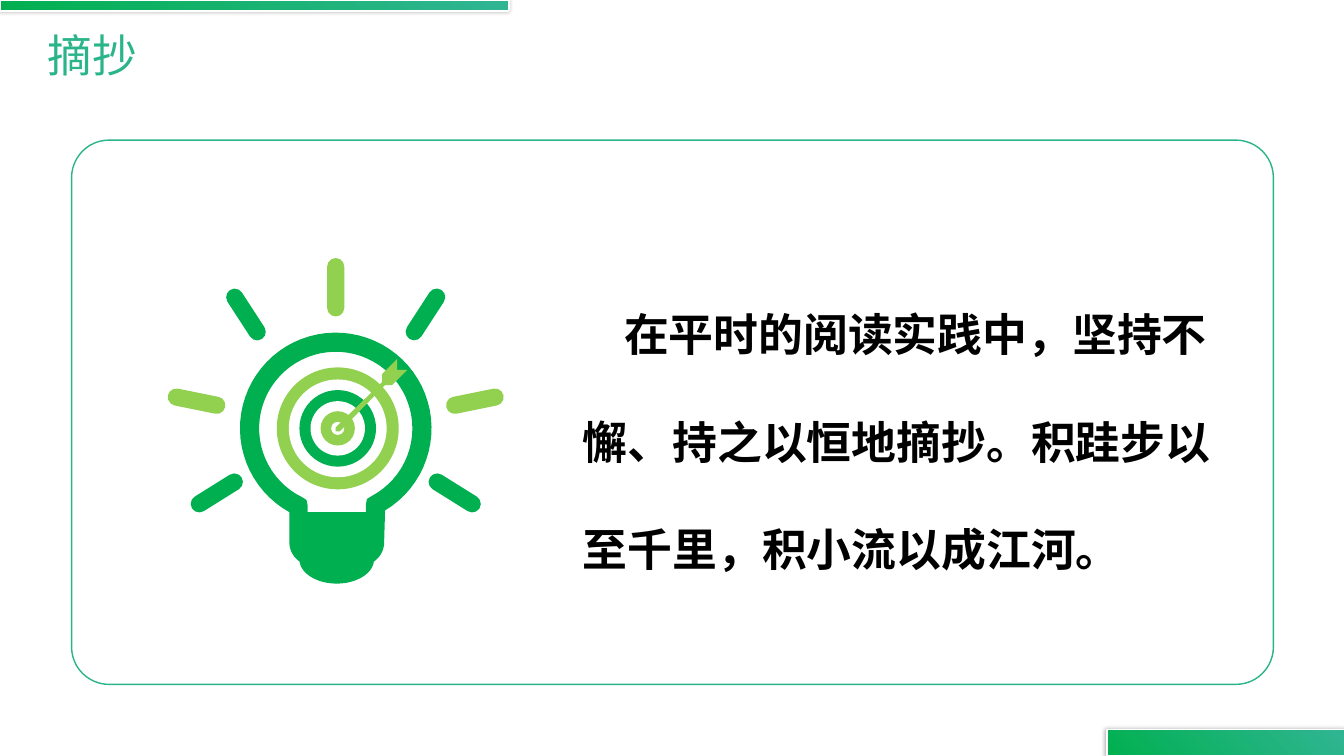
import math
import pptx
import pptx.util
import pptx.dml.color
import pptx.enum.shapes
import pptx.enum.text
import pptx.oxml
import pptx.oxml.ns

Inches = pptx.util.Inches
Pt = pptx.util.Pt
KIND = pptx.enum.shapes.MSO_SHAPE
TEXT = pptx.enum.text
HUES = {"green": "00B050", "lime": "92D050", "teal": "2AB48A",
        "mint": "30B593", "white": "FFFFFF", "black": "000000"}
SHADOW = ('<a:effectLst %s><a:outerShdw blurRad="38100" dist="12700" dir="10800000">'
          '<a:srgbClr val="%s"><a:alpha val="30000"/></a:srgbClr>'
          '</a:outerShdw></a:effectLst>')


def hue(name):
    return pptx.dml.color.RGBColor.from_string(HUES[name])


def apply(item, form):
    for key, value in form.items():
        setattr(item, key, value)


def paint(shape, fill=None, line=None):
    shape.shadow.inherit = False
    if fill:
        shape.fill.solid()
        shape.fill.fore_color.rgb = hue(fill)
    else:
        shape.fill.background()
    if line:
        shape.line.color.rgb = hue(line)
        shape.line.width = Pt(1)
    else:
        shape.line.fill.background()
    return shape


def add(slide, kind, box, fill=None, line=None):
    shape = slide.shapes.add_shape(kind, *map(Inches, box))
    return paint(shape, fill, line)


def disc(slide, x, y, size, fill):
    add(slide, KIND.OVAL, (x - size / 2, y - size / 2, size, size), fill)


def arc(x, y, wide, high, start, end):
    turns = [math.radians(start + (end - start) * i / 60) for i in range(61)]
    return [(x + wide * math.cos(t), y + high * math.sin(t)) for t in turns]


def trace(slide, fill, *loops):
    loops = [[(Inches(x), Inches(y)) for x, y in loop] for loop in loops]
    pen = slide.shapes.build_freeform(*loops[0][0])
    for i, loop in enumerate(loops):
        if i:
            pen.move_to(*loop[0])
        pen.add_line_segments(loop[1:], close=True)
    paint(pen.convert_to_shape(), fill)


def bar(slide, box):
    shape = add(slide, KIND.RECTANGLE, box, "green", "white")
    shape.fill.gradient()
    shape.fill.gradient_angle = 45
    for stop, name in zip(shape.fill.gradient_stops, ("green", "mint")):
        stop.color.rgb = hue(name)
    props = shape.element.spPr
    props.remove(props.find(pptx.oxml.ns.qn("a:effectLst")))
    props.append(pptx.oxml.parse_xml(
        SHADOW % (pptx.oxml.ns.nsdecls("a"), HUES["black"])))


def frame(slide, box):
    shape = add(slide, KIND.ROUNDED_RECTANGLE, box, line="teal")
    shape.adjustments[0] = 0.069


def write(shape, words, box, color, bold, format, para):
    spots = zip(("left", "top", "width", "height"), map(Inches, box))
    apply(shape, dict(spots))
    apply(shape.text_frame, format)
    line = shape.text_frame.paragraphs[0]
    apply(line, para)
    run = line.add_run()
    run.text = words
    apply(run.font, {"size": Pt(32), "name": "Arial", "bold": bold})
    run.font.color.rgb = hue(color)
    return line


def head(slide, box):
    write(slide.shapes.title, "摘抄", box, "teal", False,
          {"word_wrap": True, "auto_size": TEXT.MSO_AUTO_SIZE.NONE,
           "vertical_anchor": TEXT.MSO_ANCHOR.MIDDLE},
          {"alignment": TEXT.PP_ALIGN.LEFT, "line_spacing": 0.9})


def quote(slide, box):
    shape = slide.shapes.add_textbox(*map(Inches, box))
    edges = ("margin_left", "margin_top", "margin_right", "margin_bottom")
    format = {"word_wrap": True, "auto_size": TEXT.MSO_AUTO_SIZE.SHAPE_TO_FIT_TEXT}
    line = write(
        shape, "在平时的阅读实践中，坚持不懈、持之以恒地摘抄。积跬步以至千里，积小流以成江河。",
        box, "black", True, format | dict.fromkeys(edges, 0),
        {"line_spacing": 2.0, "space_before": Pt(6.4), "space_after": Pt(6)})
    line._p.get_or_add_pPr().set("indent", str(Inches(0.41)))


def rays(slide, x, y):
    wide, long = 0.17, 0.58
    spokes = [(0, -1.4, 0, "lime"), (0.89, -1.13, 33, "green"),
              (1.38, -0.27, 78.5, "lime"), (1.18, 0.64, 122, "green")]
    for across, down, turn, fill in spokes:
        for side in (1, -1) if across else (1,):
            box = (x + side * across - wide / 2, y + down - long / 2, wide, long)
            ray = add(slide, KIND.ROUNDED_RECTANGLE, box, fill)
            ray.adjustments[0] = 0.5
            ray.rotation = side * turn


def bulb(slide, x, y):
    glass = (arc(x, y, 0.95, 0.95, 119, 419)
             + arc(x + 0.25, y + 1.13, 0.23, 0.23, 0, 90)
             + arc(x - 0.23, y + 1.13, 0.23, 0.23, 90, 180))
    hole = (arc(x, y, 0.76, 0.76, 116, 422)
            + [(x + 0.31, y + 0.7), (x + 0.3, y + 0.75), (x + 0.3, y + 0.83),
               (x - 0.28, y + 0.83), (x - 0.28, y + 0.76), (x - 0.29, y + 0.71)])
    trace(slide, "green", arc(x + 0.01, y + 1.3, 0.37, 0.24, 0, 180))
    trace(slide, "green", glass, hole)


def target(slide, x, y):
    rings = [(1.21, "lime"), (0.97, "white"), (0.76, "green"),
             (0.54, "white"), (0.34, "lime"), (0.13, "white")]
    for size, fill in rings:
        disc(slide, x, y, size, fill)
    dart = [(0.47, -0.43), (0.54, -0.43), (0.69, -0.58), (0.59, -0.58),
            (0.59, -0.69), (0.44, -0.54), (0.44, -0.46), (-0.02, -0.01),
            (-0.02, 0.03), (0.02, 0.03)]
    trace(slide, "lime", [(x + a, y + b) for a, b in dart])


def lamp(slide, box):
    x, y = box[0] + box[2] / 2, box[1] + 1.69
    rays(slide, x, y)
    bulb(slide, x, y)
    target(slide, x + 0.02, y)


def main():
    deck = pptx.Presentation()
    apply(deck, {"slide_width": Inches(13.33), "slide_height": Inches(7.5)})
    slide = deck.slides.add_slide(deck.slide_layouts[5])
    bar(slide, (0, 0, 5.05, 0.11))
    bar(slide, (10.98, 7.24, 2.36, 0.26))
    frame(slide, (0.71, 1.39, 11.92, 5.4))
    head(slide, (0.37, 0.3, 4.13, 0.55))
    lamp(slide, (1.65, 2.56, 3.36, 3.23))
    quote(slide, (5.78, 2.51, 6.27, 3.08))
    deck.save("out.pptx")


if __name__ == "__main__":
    main()
